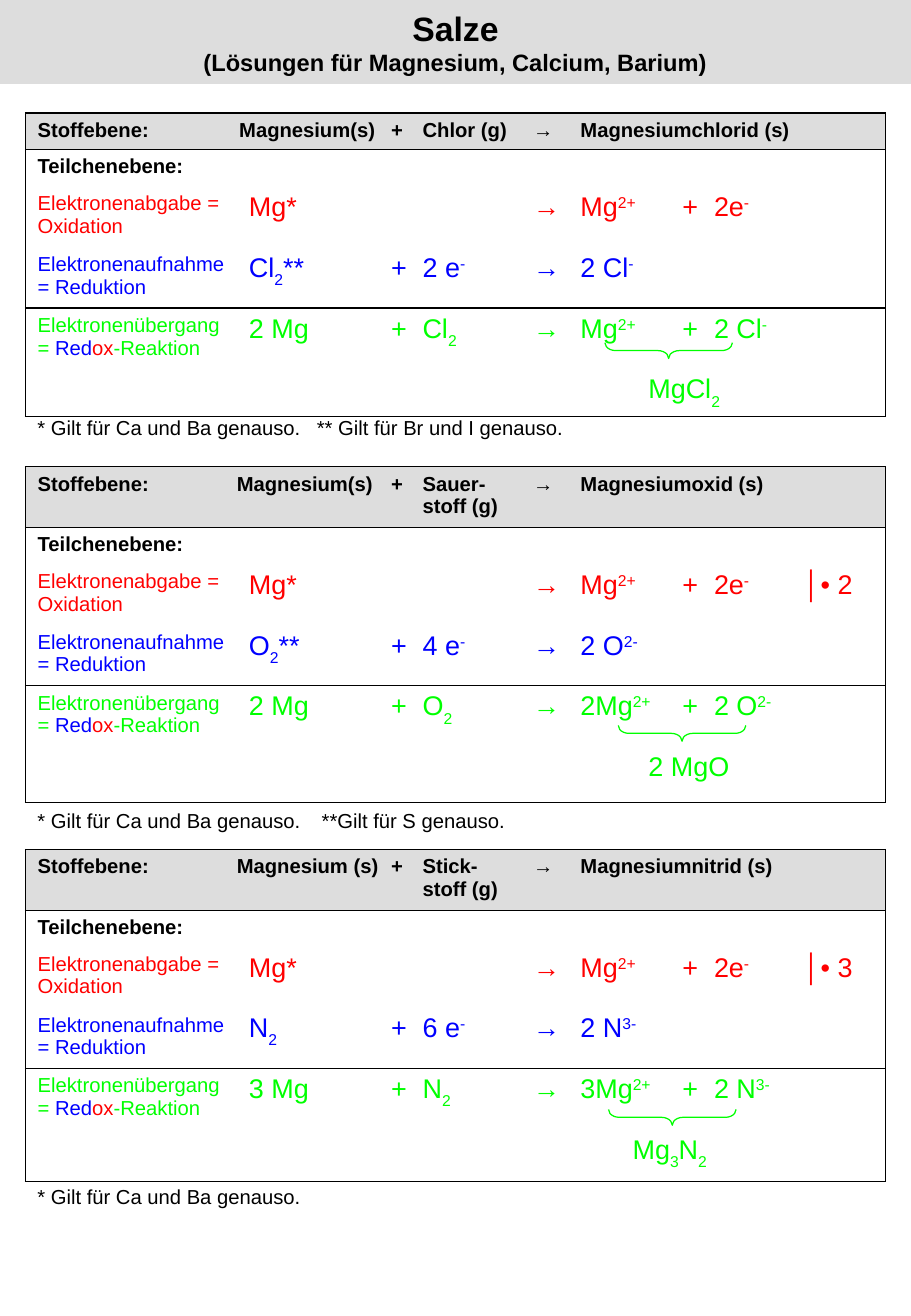
from typing import NamedTuple

from lxml.etree import SubElement
from pptx import Presentation
from pptx.dml.color import RGBColor
from pptx.enum.shapes import MSO_SHAPE
from pptx.enum.text import MSO_ANCHOR, MSO_AUTO_SIZE, PP_ALIGN
from pptx.oxml.ns import qn
from pptx.util import Inches, Pt

BLACK = RGBColor(0x00, 0x00, 0x00)
GREY = RGBColor(0xDD, 0xDD, 0xDD)
RED = RGBColor(0xFF, 0x00, 0x00)
BLUE = RGBColor(0x00, 0x00, 0xFF)
GREEN = RGBColor(0x00, 0xFF, 0x00)

LEFT, WIDTH = 0.21, 7.09
COLUMN_WIDTHS = [1.74, 1.17, 0.26, 0.91, 0.39, 0.84, 0.26, 0.74, 0.77]
ROW_COLORS = [BLACK, BLACK, RED, BLUE, GREEN, GREEN]
MERGES = [(0, 5), (1, 7), (5, 5)]
TOP_LINES = {0: 0.75, 1: 0.75, 4: 1}
BOTTOM_LINES = {0: 0.75, 3: 1, 5: 0.75}
BASELINES = {"^": 30000, "_": -30000}
REDOX = [("Elektronenübergang = ", GREEN), ("Red", BLUE), ("ox", RED), ("-Reaktion", GREEN)]


class Reaction(NamedTuple):
    top: float
    header_height: float
    last_height: float
    header_inset: float
    metal: str
    partner: str
    salt: str
    factor: str
    reduction: list
    transfer: list
    product: str
    product_inset: float
    brace_left: float
    brace_top: float
    note_top: float
    note: str
    note_tab: float


REACTIONS = [
    Reaction(0.93, 0.3, 0.38, 0.02, "Magnesium(s)", "Chlor (g)", "Magnesiumchlorid (s)", "",
             ["Cl|_2|**", "2 e|^-", "2 Cl|^-"], ["2 Mg", "Cl|_2", "Mg|^2+", "2 Cl|^-"],
             "MgCl|_2", 0.66, 5.23, 1.43, 3.37,
             "* Gilt für Ca und Ba genauso.\t** Gilt für Br und I genauso.", 2.3),
    Reaction(3.84, 0.5, 0.46, 0, "Magnesium(s)", "Sauer-stoff (g)", "Magnesiumoxid (s)", "│• 2",
             ["O|_2|**", "4 e|^-", "2 O|^2-"], ["2 Mg", "O|_2", "2Mg|^2+", "2 O|^2-"],
             "2 MgO", 0.66, 5.34, 1.67, 6.6,
             "* Gilt für Ca und Ba genauso.\t**Gilt für S genauso.", 2.34),
    Reaction(6.99, 0.5, 0.43, 0, "Magnesium (s)", "Stick-stoff (g)", "Magnesiumnitrid (s)", "│• 3",
             ["N|_2", "6 e|^-", "2 N|^3-"], ["3 Mg", "N|_2", "3Mg|^2+", "2 N|^3-"],
             "Mg|_3|N|_2", 0.53, 5.26, 1.68, 9.7,
             "* Gilt für Ca und Ba genauso.", 2.3),
]


def write(para, text, size=12, color=BLACK, bold=False):
    for part in text.split("|"):
        span = para.add_run()
        span.text = part.lstrip("^_")
        span.font.name = "Arial"
        span.font.size = Pt(size)
        span.font.bold = bold
        span.font.color.rgb = color
        if part[:1] in BASELINES:
            span.font._element.set("baseline", str(BASELINES[part[0]]))


def add_border(cell, side, width):
    line = SubElement(cell._tc.get_or_add_tcPr(), qn(f"a:ln{side}"))
    if not width:
        SubElement(line, qn("a:noFill"))
        return
    line.set("w", str(Pt(width)))
    fill = SubElement(line, qn("a:solidFill"))
    SubElement(fill, qn("a:srgbClr")).set("val", str(BLACK))


def reaction_rows(reaction):
    atom, electrons, ion = reaction.reduction
    metal, partner, cation, anion = reaction.transfer
    return [
        ["Stoffebene:", reaction.metal, "+", reaction.partner, "→", reaction.salt, "", "", ""],
        ["Teilchenebene:"] + [""] * 8,
        ["Elektronenabgabe = Oxidation", "Mg*", "", "", "→", "Mg|^2+", "+", "2e|^-",
         reaction.factor],
        ["Elektronenaufnahme = Reduktion", atom, "+", electrons, "→", ion, "", "", ""],
        [REDOX, metal, "+", partner, "→", cation, "+", anion, ""],
        [""] * 5 + [reaction.product, "", "", ""],
    ]


def fill_cell(cell, row, column, content):
    last = column + cell.span_width == len(COLUMN_WIDTHS) or column == len(COLUMN_WIDTHS) - 1
    add_border(cell, "L", 0.75 if column == 0 else 0)
    add_border(cell, "R", 0.75 if last else 0)
    add_border(cell, "T", TOP_LINES.get(row, 0))
    add_border(cell, "B", BOTTOM_LINES.get(row, 0))
    if row == 0:
        cell.fill.solid()
        cell.fill.fore_color.rgb = GREY
    else:
        cell.fill.background()
    para = cell.text_frame.paragraphs[0]
    if not content:
        SubElement(para._p, qn("a:endParaRPr")).set("sz", "1200")
        return
    size = 12 if row < 2 or column == 0 else 16
    spans = content if isinstance(content, list) else [(content, ROW_COLORS[row])]
    for text, color in spans:
        write(para, text, size=size, color=color, bold=row < 2)


def add_reaction_table(page, reaction, left, width):
    heights = [reaction.header_height, 0.3, 0.5, 0.5, 0.5, reaction.last_height]
    frame = page.shapes.add_table(len(heights), len(COLUMN_WIDTHS), Inches(left),
                                  Inches(reaction.top), Inches(width), Inches(sum(heights)))
    table = frame.table
    table.first_row = False
    table.horz_banding = False
    for column, column_width in enumerate(COLUMN_WIDTHS):
        table.columns[column].width = Inches(column_width)
    for row, height in enumerate(heights):
        table.rows[row].height = Inches(height)
    for row, column in MERGES:
        table.cell(row, column).merge(table.cell(row, len(COLUMN_WIDTHS) - 1))
    for row, contents in enumerate(reaction_rows(reaction)):
        for column, content in enumerate(contents):
            fill_cell(table.cell(row, column), row, column, content)
    metal = table.cell(0, 1)
    metal.margin_left = metal.margin_right = Inches(reaction.header_inset)
    table.cell(5, 5).margin_left = Inches(reaction.product_inset)


def add_brace(page, left, top):
    brace = page.shapes.add_shape(MSO_SHAPE.LEFT_BRACE, Inches(left), Inches(top),
                                  Inches(0.13), Inches(1.05))
    brace.rotation = 270
    brace.adjustments[0] = 0.68
    brace.shadow.inherit = False
    brace.fill.background()
    brace.line.color.rgb = GREEN
    brace.line.width = Pt(0.75)


def add_note(page, text, tab, left, top, width):
    box = page.shapes.add_textbox(Inches(left), Inches(top), Inches(width), Inches(0.3))
    box.text_frame.word_wrap = True
    para = box.text_frame.paragraphs[0]
    if "\t" in text:
        stops = SubElement(para._p.get_or_add_pPr(), qn("a:tabLst"))
        stop = SubElement(stops, qn("a:tab"))
        stop.set("pos", str(Inches(tab)))
        stop.set("algn", "l")
    write(para, text)


def add_reaction(page, reaction, left, width):
    add_reaction_table(page, reaction, left, width)
    add_brace(page, left + reaction.brace_left, reaction.top + reaction.brace_top)
    add_note(page, reaction.note, reaction.note_tab, left, reaction.note_top, width)


def add_title(page, left, top, width, height):
    title = page.shapes.title
    title.left, title.top = Inches(left), Inches(top)
    title.width, title.height = Inches(width), Inches(height)
    title.fill.solid()
    title.fill.fore_color.rgb = GREY
    frame = title.text_frame
    frame.word_wrap = True
    frame.auto_size = MSO_AUTO_SIZE.NONE
    frame.vertical_anchor = MSO_ANCHOR.MIDDLE
    para = frame.paragraphs[0]
    para.alignment = PP_ALIGN.CENTER
    write(para, "Salze", size=20, bold=True)
    para.add_line_break()
    write(para, "(Lösungen für Magnesium, Calcium, Barium)", size=14, bold=True)


def main():
    deck = Presentation()
    deck.slide_width, deck.slide_height = Inches(7.5), Inches(10.83)
    page = deck.slides.add_slide(deck.slide_layouts[5])
    add_title(page, 0, 0, 7.5, 0.69)
    for reaction in REACTIONS:
        add_reaction(page, reaction, LEFT, WIDTH)
    deck.save("out.pptx")


if __name__ == "__main__":
    main()
